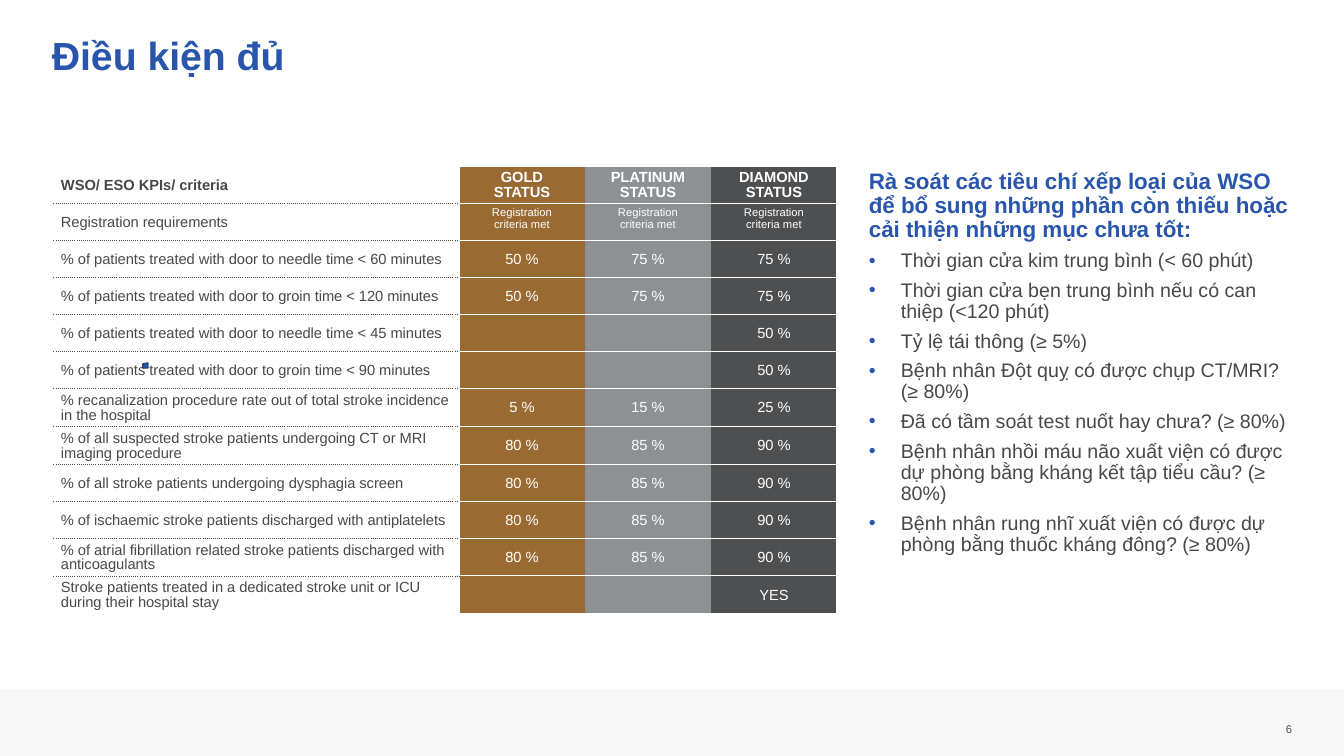
"""Build the slide of stroke award criteria with a review checklist."""
from lxml.etree import SubElement
from pptx import Presentation
from pptx.dml.color import RGBColor
from pptx.enum.shapes import MSO_SHAPE as Preset
from pptx.enum.text import MSO_ANCHOR as Anchor, MSO_AUTO_SIZE as AutoSize, PP_ALIGN as Align
from pptx.oxml.ns import qn
from pptx.util import Pt

TITLE = "Điều kiện đủ"
PAGE_NUMBER = "6"
CHECKLIST_HEADING = ("Rà soát các tiêu chí xếp loại của WSO để bổ sung những phần "
                     "còn thiếu hoặc cải thiện những mục chưa tốt:")
CHECKLIST = [
    "Thời gian cửa kim trung bình (< 60 phút)",
    "Thời gian cửa bẹn trung bình nếu có can thiệp (<120 phút)",
    "Tỷ lệ tái thông (≥ 5%)",
    "Bệnh nhân Đột quỵ có được chụp CT/MRI? (≥ 80%)",
    "Đã có tầm soát test nuốt hay chưa? (≥ 80%)",
    "Bệnh nhân nhồi máu não xuất viện có được dự phòng bằng kháng kết tập tiểu cầu? (≥ 80%)",
    "Bệnh nhân rung nhĩ xuất viện có được dự phòng bằng thuốc kháng đông? (≥ 80%)",
]
REGISTERED = "Registration\ncriteria met"
CRITERIA = [
    ("WSO/ ESO KPIs/ criteria", "GOLD\vSTATUS", "PLATINUM STATUS", "DIAMOND STATUS"),
    ("Registration requirements", REGISTERED, REGISTERED, REGISTERED),
    ("% of patients treated with door to needle time < 60 minutes", "50 %", "75 %", "75 %"),
    ("% of patients treated with door to groin time < 120 minutes", "50 %", "75 %", "75 %"),
    ("% of patients treated with door to needle time < 45 minutes", "", "", "50 %"),
    ("% of patients treated with door to groin time < 90 minutes", "", "", "50 %"),
    ("% recanalization procedure rate out of total stroke incidence in the hospital",
     "5 %", "15 %", "25 %"),
    ("% of all suspected stroke patients undergoing CT or MRI imaging procedure",
     "80 %", "85 %", "90 %"),
    ("% of all stroke patients undergoing dysphagia screen", "80 %", "85 %", "90 %"),
    ("% of ischaemic stroke patients discharged with antiplatelets", "80 %", "85 %", "90 %"),
    ("% of atrial fibrillation related stroke patients discharged with anticoagulants",
     "80 %", "85 %", "90 %"),
    ("Stroke patients treated in a dedicated stroke unit or ICU during their hospital stay",
     "", "", "YES"),
]

FONT = "Arial"
WHITE = RGBColor(0xFF, 0xFF, 0xFF)
BLUE = RGBColor(0x29, 0x55, 0xAC)
DARK_BLUE = RGBColor(0x1E, 0x3F, 0x7F)
TEXT_GRAY = RGBColor(0x48, 0x48, 0x48)
FOOTER_GRAY = RGBColor(0xF2, 0xF2, 0xF2)
STATUS_COLORS = [RGBColor(0x9A, 0x6A, 0x33), RGBColor(0x8D, 0x91, 0x94), RGBColor(0x4E, 0x4F, 0x50)]

SLIDE_WIDTH, SLIDE_HEIGHT = 1344, 756
EMU_PER_PX = 12192000 / SLIDE_WIDTH
TABLE_LEFT, TABLE_TOP = 54, 166
COLUMN_WIDTHS = [405, 126, 126, 126]
ROW_HEIGHT = 37
CELL_MARGINS = (7, 4, 7, 2)
BULLET_INDENT = 32
PLAIN_TABLE_STYLE = "{2D5ABB26-0587-4C30-8999-92F81FD0307C}"
SOLID_WHITE = (WHITE, 1, "solid")
DOTTED_GRAY = (TEXT_GRAY, 0.5, "sysDot")


def px(length):
    return round(length * EMU_PER_PX)


def set_margins(target, margins):
    (target.margin_left, target.margin_top,
     target.margin_right, target.margin_bottom) = map(px, margins)


def write(paragraph, text, size, color, bold=False, align=Align.LEFT, spacing=0.9):
    paragraph.alignment = align
    paragraph.line_spacing = spacing
    for index, line in enumerate(text.split("\v")):
        if index:
            paragraph.add_line_break()
        run = paragraph.add_run()
        run.text = line
        run.font.name, run.font.size, run.font.bold = FONT, Pt(size), bold
        run.font.color.rgb = color


def add_box(slide, left, top, width, height):
    frame = slide.shapes.add_textbox(px(left), px(top), px(width), px(height)).text_frame
    frame.word_wrap = True
    return frame


def add_shape(slide, preset, left, top, width, height, color):
    shape = slide.shapes.add_shape(preset, px(left), px(top), px(width), px(height))
    shape.shadow.inherit = False
    shape.fill.solid()
    shape.fill.fore_color.rgb = color
    return shape


def add_bullet(paragraph):
    properties = paragraph._p.get_or_add_pPr()
    properties.set("marL", str(px(BULLET_INDENT)))
    properties.set("indent", str(-px(BULLET_INDENT)))
    bullet_color = SubElement(properties, qn("a:buClr"))
    SubElement(bullet_color, qn("a:srgbClr"), val=str(BLUE))
    SubElement(properties, qn("a:buFont"), typeface=FONT)
    SubElement(properties, qn("a:buChar"), char="•")


def set_borders(cell, borders):
    properties = cell._tc.get_or_add_tcPr()
    for side in "LRTB":
        if side in borders:
            color, width, dash = borders[side]
            line = SubElement(properties, qn(f"a:ln{side}"), w=str(Pt(width)))
            fill = SubElement(line, qn("a:solidFill"))
            SubElement(fill, qn("a:srgbClr"), val=str(color))
            SubElement(line, qn("a:prstDash"), val=dash)


def borders_for(row, column):
    borders = {"T": SOLID_WHITE, "B": SOLID_WHITE}
    if column == 0:
        borders.update(L=SOLID_WHITE, R=SOLID_WHITE)
        if row > 0:
            borders["T"] = DOTTED_GRAY
        if row < len(CRITERIA) - 1:
            borders["B"] = DOTTED_GRAY
    elif column == len(COLUMN_WIDTHS) - 1:
        borders["R"] = SOLID_WHITE
    return borders


def fill_cell(cell, row, column, text):
    set_margins(cell, CELL_MARGINS)
    set_borders(cell, borders_for(row, column))
    if row and not column:
        cell.fill.background()
    else:
        cell.fill.solid()
        cell.fill.fore_color.rgb = STATUS_COLORS[column - 1] if column else WHITE
    registered = text == REGISTERED
    cell.vertical_anchor = Anchor.TOP if registered else Anchor.MIDDLE
    frame = cell.text_frame
    if not text:
        SubElement(frame.paragraphs[0]._p, qn("a:endParaRPr"), sz="1050")
        return
    for index, line in enumerate(text.split("\n")):
        paragraph = frame.add_paragraph() if index else frame.paragraphs[0]
        write(paragraph, line, 8 if registered else 10.5, WHITE if column else TEXT_GRAY,
              bold=row == 0, align=Align.CENTER if column else Align.LEFT)


def add_criteria_table(slide):
    table = slide.shapes.add_table(
        len(CRITERIA), len(COLUMN_WIDTHS), px(TABLE_LEFT), px(TABLE_TOP),
        px(sum(COLUMN_WIDTHS)), px(ROW_HEIGHT * len(CRITERIA))).table
    table.first_row = table.horz_banding = False
    table._tbl.tblPr.find(qn("a:tableStyleId")).text = PLAIN_TABLE_STYLE
    for column, width in zip(table.columns, COLUMN_WIDTHS):
        column.width = px(width)
    for row, texts in enumerate(CRITERIA):
        table.rows[row].height = px(ROW_HEIGHT)
        for column, text in enumerate(texts):
            fill_cell(table.cell(row, column), row, column, text)


def add_checklist(slide):
    frame = add_box(slide, 859, 165, 447, 399)
    frame.auto_size = AutoSize.SHAPE_TO_FIT_TEXT
    heading = frame.paragraphs[0]
    heading.space_after = Pt(6)
    write(heading, CHECKLIST_HEADING, 16, BLUE, bold=True)
    for item in CHECKLIST:
        paragraph = frame.add_paragraph()
        add_bullet(paragraph)
        paragraph.space_after = Pt(6)
        write(paragraph, item, 14, TEXT_GRAY)


def main():
    presentation = Presentation()
    presentation.slide_width, presentation.slide_height = px(SLIDE_WIDTH), px(SLIDE_HEIGHT)
    slide = presentation.slides.add_slide(presentation.slide_layouts[6])

    footer = add_shape(slide, Preset.RECTANGLE, 0, 689, SLIDE_WIDTH, 67, FOOTER_GRAY)
    footer.line.fill.background()
    footer_color = footer._element.spPr.find(qn("a:solidFill"))[0]
    SubElement(footer_color, qn("a:alpha"), val="50000")

    number = add_box(slide, 1253, 702, 39, 39)
    set_margins(number, (10, 5, 0, 5))
    number.vertical_anchor = Anchor.BOTTOM
    write(number.paragraphs[0], PAGE_NUMBER, 8, TEXT_GRAY, align=Align.RIGHT, spacing=1.0)

    title = add_box(slide, 42, 32, 1055, 85)
    write(title.paragraphs[0], TITLE, 28, BLUE, bold=True)

    marker = add_shape(slide, Preset.FLOWCHART_MANUAL_INPUT, 143, 363, 5, 5, BLUE)
    marker.line.color.rgb = DARK_BLUE
    marker.line.width = Pt(1)

    add_checklist(slide)
    add_criteria_table(slide)
    presentation.save("out.pptx")


if __name__ == "__main__":
    main()
